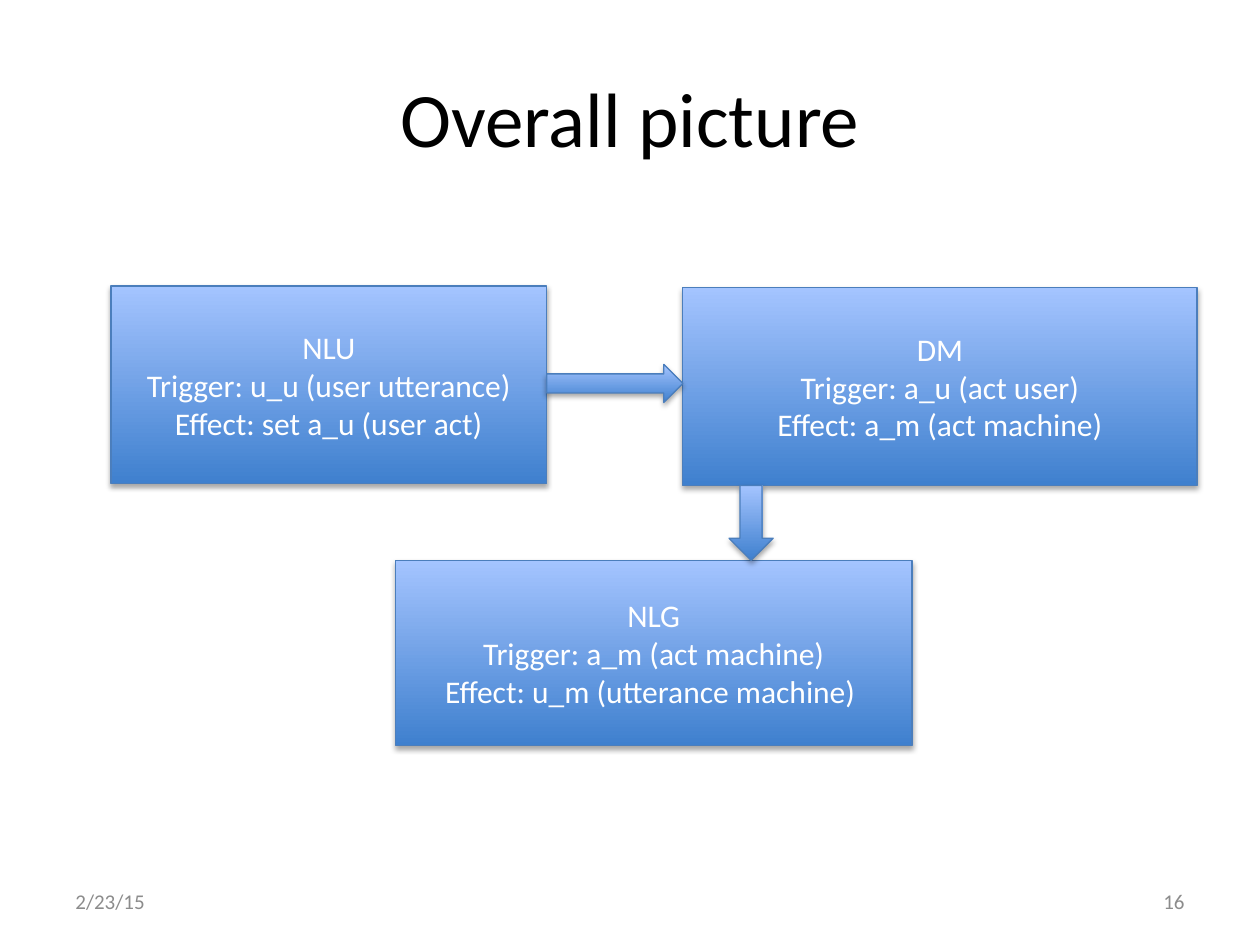
import pptx
import pptx.util
import pptx.oxml
import pptx.oxml.ns
import pptx.dml.color
import pptx.enum.shapes
import pptx.enum.text

Pt = pptx.util.Pt
Shape = pptx.enum.shapes.MSO_SHAPE
Align = pptx.enum.text.PP_ALIGN

FONT = "Calibri"
COLORS = {
    "title": "000000", "label": "FFFFFF", "footer": "8C8C8C",
    "bottom": "3F80CE", "top": "A4C4FF", "edge": "4B7EBC", "shadow": "000000",
}
MARGIN, PAGE_WIDTH, PAGE_HEIGHT = 36, 720, 540
FOOTER_WIDTH = 168
MODULES = {
    "NLU": ((63.4, 163.4, 249, 113),
            ["Trigger: u_u (user utterance)", "Effect: set a_u (user act)"]),
    "DM": ((390.2, 164.4, 293.8, 113),
           ["Trigger: a_u (act user)", "Effect: a_m (act machine)"]),
    "NLG": ((226, 320.2, 295.2, 105.8),
            ["Trigger: a_m (act machine)", "Effect: u_m (utterance machine) "]),
}
TEXTS = [
    ("Overall picture", (MARGIN, 21.6, PAGE_WIDTH - 2 * MARGIN, 90), 44, "title", Align.CENTER),
    ("2/23/15", (MARGIN, 500.5, FOOTER_WIDTH, 28.75), 12, "footer", Align.LEFT),
    ("16", (PAGE_WIDTH - MARGIN - FOOTER_WIDTH, 500.5, FOOTER_WIDTH, 28.75),
     12, "footer", Align.RIGHT),
]


def color(name):
    return pptx.dml.color.RGBColor.from_string(COLORS[name])


def write(shape, lines, size, color_name, align):
    frame = shape.text_frame
    frame.word_wrap = True
    frame.vertical_anchor = pptx.enum.text.MSO_ANCHOR.MIDDLE
    for index, line in enumerate(lines):
        para = frame.add_paragraph() if index else frame.paragraphs[0]
        para.alignment = align
        span = para.add_run()
        span.text = line
        span.font.name = FONT
        span.font.size = Pt(size)
        span.font.color.rgb = color(color_name)


def add_glossy(page, kind, area):
    shape = page.shapes.add_shape(kind, *map(Pt, area))
    shape.fill.gradient()
    shape.fill.gradient_angle = 90
    for stop, name in zip(shape.fill.gradient_stops, ("bottom", "top")):
        stop.color.rgb = color(name)
    shape.line.color.rgb = color("edge")
    shape.line.width = Pt(0.75)
    shape.shadow.inherit = False
    effects = shape.element.spPr.find(pptx.oxml.ns.qn("a:effectLst"))
    effects.append(pptx.oxml.parse_xml(
        f'<a:outerShdw {pptx.oxml.ns.nsdecls("a")} blurRad="{Pt(3.1)}" dist="{Pt(1.8)}" '
        f'dir="5400000" rotWithShape="0"><a:srgbClr val="{COLORS["shadow"]}">'
        '<a:alpha val="35000"/></a:srgbClr></a:outerShdw>'))
    return shape


def main():
    deck = pptx.Presentation()
    deck.slide_width, deck.slide_height = Pt(PAGE_WIDTH), Pt(PAGE_HEIGHT)
    page = deck.slides.add_slide(deck.slide_layouts[6])

    for text, area, size, color_name, align in TEXTS:
        write(page.shapes.add_textbox(*map(Pt, area)), [text], size, color_name, align)

    for name, (area, details) in MODULES.items():
        box = add_glossy(page, Shape.RECTANGLE, area)
        write(box, [name, *details], 18, "label", Align.CENTER)

    nlu, dm, nlg = (area for area, details in MODULES.values())
    nlu_right = nlu[0] + nlu[2]
    dm_bottom = dm[1] + dm[3]
    add_glossy(page, Shape.RIGHT_ARROW, (nlu_right, 208.2, dm[0] - nlu_right, 21.8))
    add_glossy(page, Shape.DOWN_ARROW, (416.6, dm_bottom, 25.2, nlg[1] - dm_bottom))

    deck.save("out.pptx")


if __name__ == "__main__":
    main()
